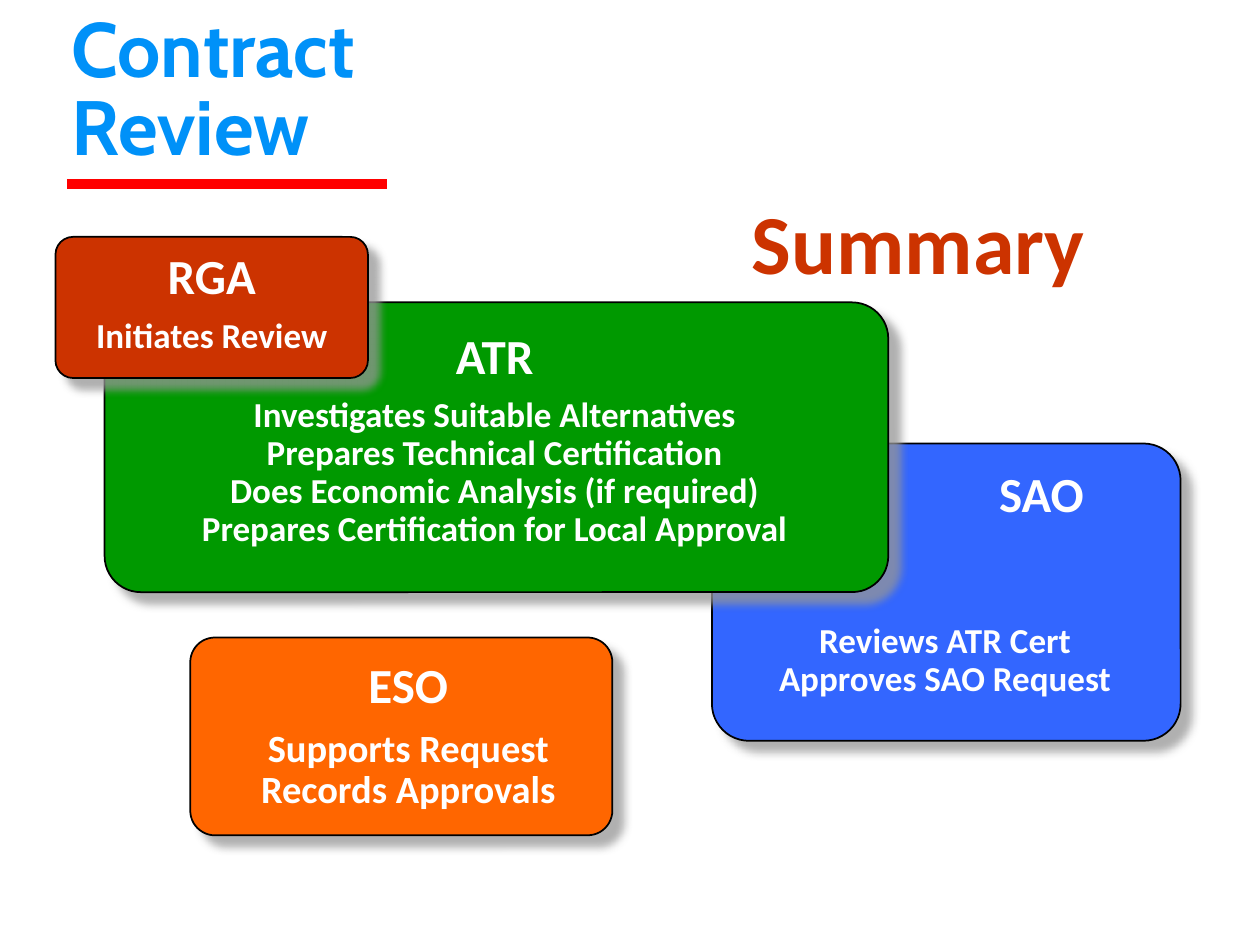
from dataclasses import dataclass

from lxml import etree
from pptx import Presentation
from pptx.dml.color import RGBColor
from pptx.enum.shapes import MSO_CONNECTOR, MSO_SHAPE
from pptx.enum.text import MSO_ANCHOR, PP_ALIGN
from pptx.oxml.ns import qn
from pptx.util import Inches, Pt

ROUNDED = MSO_SHAPE.ROUNDED_RECTANGLE
STRAIGHT = MSO_CONNECTOR.STRAIGHT
TOP, BOTTOM = MSO_ANCHOR.TOP, MSO_ANCHOR.BOTTOM
LEFT, CENTER = PP_ALIGN.LEFT, PP_ALIGN.CENTER


@dataclass(frozen=True)
class Theme:
    font: str = "Calibri"
    title_font: str = "Cabin"
    title: str = "0091F8"
    rule: str = "FF0000"
    red: str = "CC3300"
    green: str = "009900"
    blue: str = "3366FF"
    orange: str = "FF6600"
    outline: str = "000000"
    shadow: str = "969696"
    text: str = "FFFFFF"
    title_size: int = 44
    summary_size: int = 48
    heading_size: int = 28
    body_size: int = 20
    large_body_size: int = 22


THEME = Theme()


@dataclass(frozen=True)
class Card:
    heading: str
    lines: tuple
    color: str
    panel: tuple
    text_area: tuple
    gap: float = 9
    body_size: int = THEME.body_size
    heading_spacing: float = 0.62
    heading_indent: float = 0


SAO = Card("SAO", ("Reviews ATR Cert", "Approves SAO Request"), THEME.blue,
           (5.65, 3.52, 3.72, 2.36), (5.69, 3.7, 3.62, 2.03),
           gap=57.5, heading_spacing=0.85, heading_indent=2.14)
ATR = Card("ATR", ("Investigates Suitable Alternatives",
                   "Prepares Technical Certification",
                   "Does Economic Analysis (if required)",
                   "Prepares Certification for Local Approval"), THEME.green,
           (0.83, 2.4, 6.22, 2.3), (0.58, 2.69, 6.69, 1.84))
RGA = Card("RGA", ("Initiates Review",), THEME.red,
           (0.44, 1.88, 2.48, 1.12), (0.32, 2.06, 2.72, 0.84))
ESO = Card("ESO", ("Supports Request", "Records Approvals"), THEME.orange,
           (1.51, 5.06, 3.35, 1.57), (1.43, 5.3, 3.62, 1.26),
           gap=10.7, body_size=THEME.large_body_size)


def rgb(color):
    return RGBColor.from_string(color)


def format_paragraph(paragraph, size, color, font=THEME.font, alignment=LEFT):
    paragraph.alignment = alignment
    for run in paragraph.runs:
        run.font.name = font
        run.font.size = Pt(size)
        run.font.bold = True
        run.font.color.rgb = rgb(color)


def add_text(shapes, area, text, anchor=TOP):
    box = shapes.add_textbox(*map(Inches, area))
    text_frame = box.text_frame
    text_frame.word_wrap = True
    text_frame.vertical_anchor = anchor
    text_frame.text = text
    return text_frame.paragraphs


def add_shadow(shape):
    effects = etree.SubElement(shape._element.spPr, qn("a:effectLst"))
    shadow = etree.SubElement(effects, qn("a:outerShdw"), blurRad=str(Pt(5)),
                              dist=str(Pt(8.5)), dir=str(45 * 60000),
                              algn="ctr", rotWithShape="0")
    color = etree.SubElement(shadow, qn("a:srgbClr"), val=THEME.shadow)
    etree.SubElement(color, qn("a:alpha"), val="75000")


def add_panel(shapes, area, color):
    panel = shapes.add_shape(ROUNDED, *map(Inches, area))
    panel.adjustments[0] = 0.125
    panel.fill.solid()
    panel.fill.fore_color.rgb = rgb(color)
    panel.line.color.rgb = rgb(THEME.outline)
    panel.line.width = Pt(1)
    add_shadow(panel)


def add_card(slide, card):
    shapes = slide.shapes.add_group_shape().shapes
    add_panel(shapes, card.panel, card.color)
    heading, *body = add_text(shapes, card.text_area,
                              "\n".join((card.heading, *card.lines)))
    alignment = LEFT if card.heading_indent else CENTER
    format_paragraph(heading, THEME.heading_size, THEME.text, alignment=alignment)
    heading.line_spacing = card.heading_spacing
    if card.heading_indent:
        heading._p.get_or_add_pPr().set("marL", str(Inches(card.heading_indent)))
    for paragraph in body:
        format_paragraph(paragraph, card.body_size, THEME.text, alignment=CENTER)
        paragraph.line_spacing = 0.9
    body[0].space_before = Pt(card.gap)


def add_rule(slide, left, right, top):
    rule = slide.shapes.add_connector(STRAIGHT, Inches(left), Inches(top),
                                      Inches(right), Inches(top))
    rule.line.color.rgb = rgb(THEME.rule)
    rule.line.width = Pt(6)
    etree.SubElement(rule._element.spPr, qn("a:effectLst"))


def main():
    presentation = Presentation()
    presentation.slide_width = Inches(10)
    presentation.slide_height = Inches(7.5)
    slide = presentation.slides.add_slide(presentation.slide_layouts[6])

    add_card(slide, SAO)
    add_card(slide, ATR)
    summary, = add_text(slide.shapes, (5.87, 1.51, 3.64, 0.85), "Summary", BOTTOM)
    format_paragraph(summary, THEME.summary_size, THEME.red)
    add_card(slide, RGA)
    add_rule(slide, 0.53, 3.07, 1.46)
    add_card(slide, ESO)
    title, = add_text(slide.shapes, (0.47, 0.2, 8.5, 1.21),
                      "Contract\vReview", BOTTOM)
    format_paragraph(title, THEME.title_size, THEME.title, THEME.title_font)
    title.line_spacing = 0.85

    presentation.save("out.pptx")


if __name__ == "__main__":
    main()
